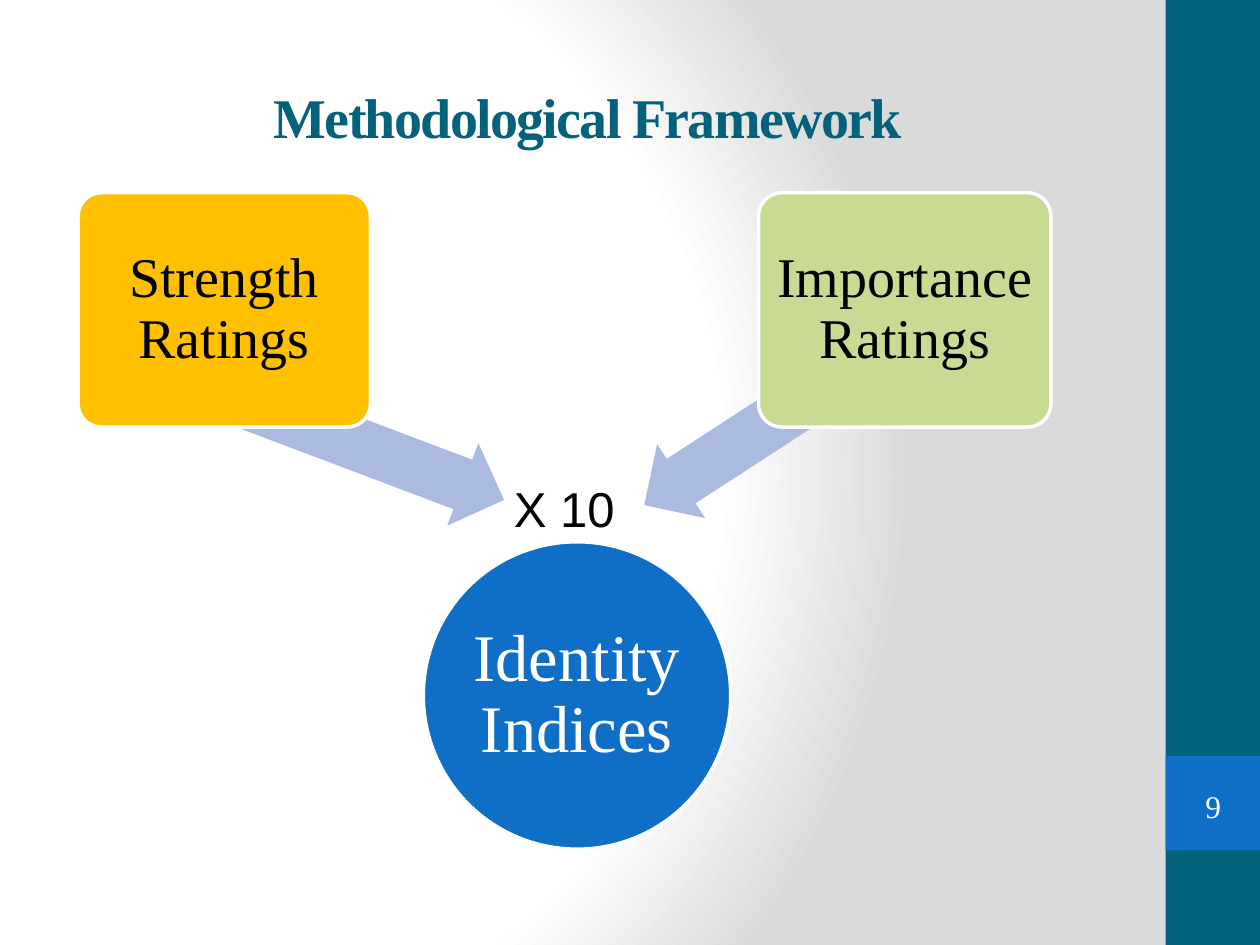
import pptx
import pptx.util
import pptx.dml.color
import pptx.enum.shapes
import pptx.enum.text
import pptx.oxml
import pptx.oxml.ns

Pt = pptx.util.Pt
SHAPE = pptx.enum.shapes.MSO_SHAPE
ALIGN = pptx.enum.text.PP_ALIGN
MIDDLE = pptx.enum.text.MSO_ANCHOR.MIDDLE

COLOURS = {
    "teal": "04617B", "blue": "0F6FC6", "white": "FFFFFF", "grey": "DADADA",
    "amber": "FFC000", "green": "C9DA92", "lavender": "ABBBDF", "black": "000000",
}
SERIF = "Times New Roman"
TITLE = "Methodological Framework"
FACTOR = "X 10"
PAGE_NUMBER = "9"
SIDEBAR = [((666, 0, 54, 540), "teal"), ((666, 432, 54, 54), "blue")]
ARROWS = [((95.76, 225.36, 198.72, 50.4), 200.7), ((352.8, 211.68, 190.08, 50.4), 327)]
CONCEPTS = [
    ("Strength Ratings", SHAPE.ROUNDED_RECTANGLE, (44.64, 110.16, 167.04, 133.92), "amber", "black", 32),
    ("Importance Ratings", SHAPE.ROUNDED_RECTANGLE, (433.44, 110.16, 167.04, 133.92), "green", "black", 32),
    ("Identity Indices", SHAPE.OVAL, (241.92, 309.6, 175.68, 175.68), "blue", "white", 38),
]


def rgb(name):
    """Return the named colour."""
    return pptx.dml.color.RGBColor.from_string(COLOURS[name])


def add_figure(slide, preset, box, fill=None, outline=None, adjustments=()):
    """Add a flat preset shape."""
    figure = slide.shapes.add_shape(preset, *map(Pt, box))
    figure.shadow.inherit = False
    if fill:
        figure.fill.solid()
        figure.fill.fore_color.rgb = rgb(fill)
    else:
        figure.fill.background()
    if outline:
        figure.line.color.rgb = rgb(outline)
        figure.line.width = Pt(2)
    else:
        figure.line.fill.background()
    for index, value in enumerate(adjustments):
        figure.adjustments[index] = value
    return figure


def write(figure, text, size, colour, font=SERIF, align=ALIGN.CENTER, margin=2):
    """Fill a shape with one formatted paragraph."""
    frame = figure.text_frame
    frame.word_wrap = True
    frame.vertical_anchor = MIDDLE
    frame.margin_left = frame.margin_right = Pt(margin)
    frame.margin_top = frame.margin_bottom = Pt(min(margin, 3.6))
    frame.text = text
    paragraph = frame.paragraphs[0]
    paragraph.alignment = align
    paragraph.font.name = font
    paragraph.font.size = Pt(size)
    paragraph.font.color.rgb = rgb(colour)
    return paragraph


def paint_background(slide):
    """Give the slide a white glow that fades to grey on the right."""
    slide.background.fill.gradient()
    linear = slide.element.find(".//" + pptx.oxml.ns.qn("a:gradFill"))
    stops = "".join(
        f'<a:gs pos="{position * 1000}"><a:srgbClr val="{COLOURS[name]}"/></a:gs>'
        for position, name in [(0, "white"), (75, "white"), (100, "grey")]
    )
    radial = pptx.oxml.parse_xml(
        f'<a:gradFill {pptx.oxml.ns.nsdecls("a")} rotWithShape="1"><a:gsLst>{stops}</a:gsLst>'
        '<a:path path="circle"><a:fillToRect l="20000" t="50000" r="100000" b="50000"/></a:path>'
        "</a:gradFill>"
    )
    linear.getparent().replace(linear, radial)


def main():
    """Build the methodological framework slide."""
    deck = pptx.Presentation()
    deck.slide_width, deck.slide_height = Pt(720), Pt(540)
    slide = deck.slides.add_slide(deck.slide_layouts[5])
    paint_background(slide)

    title = slide.shapes.title
    title.left, title.top, title.width, title.height = map(Pt, (36, 21.6, 599.76, 90))
    heading = write(title, TITLE, 32, "teal", margin=7.2)
    heading.font.bold = True
    heading.runs[0].font._element.set("spc", "-100")

    for box, fill in SIDEBAR:
        add_figure(slide, SHAPE.RECTANGLE, box, fill)
    page = add_figure(slide, SHAPE.DOUBLE_BRACKET, (671.76, 444.96, 43.2, 30.96), adjustments=[0.18])
    write(page, PAGE_NUMBER, 18, "white", margin=0)

    for box, rotation in ARROWS:
        arrow = add_figure(slide, SHAPE.LEFT_ARROW, box, "lavender", adjustments=[0.6, 0.5])
        arrow.rotation = rotation
    for text, preset, box, fill, ink, size in CONCEPTS:
        corners = [0.1] if preset == SHAPE.ROUNDED_RECTANGLE else []
        concept = add_figure(slide, preset, box, fill, "white", corners)
        write(concept, text, size, ink).line_spacing = 0.9

    factor = slide.shapes.add_textbox(*map(Pt, (286.56, 270, 78.48, 41.04)))
    write(factor, FACTOR, 28, "black", "Arial", ALIGN.LEFT, 7.2)

    deck.save("out.pptx")


if __name__ == "__main__":
    main()
